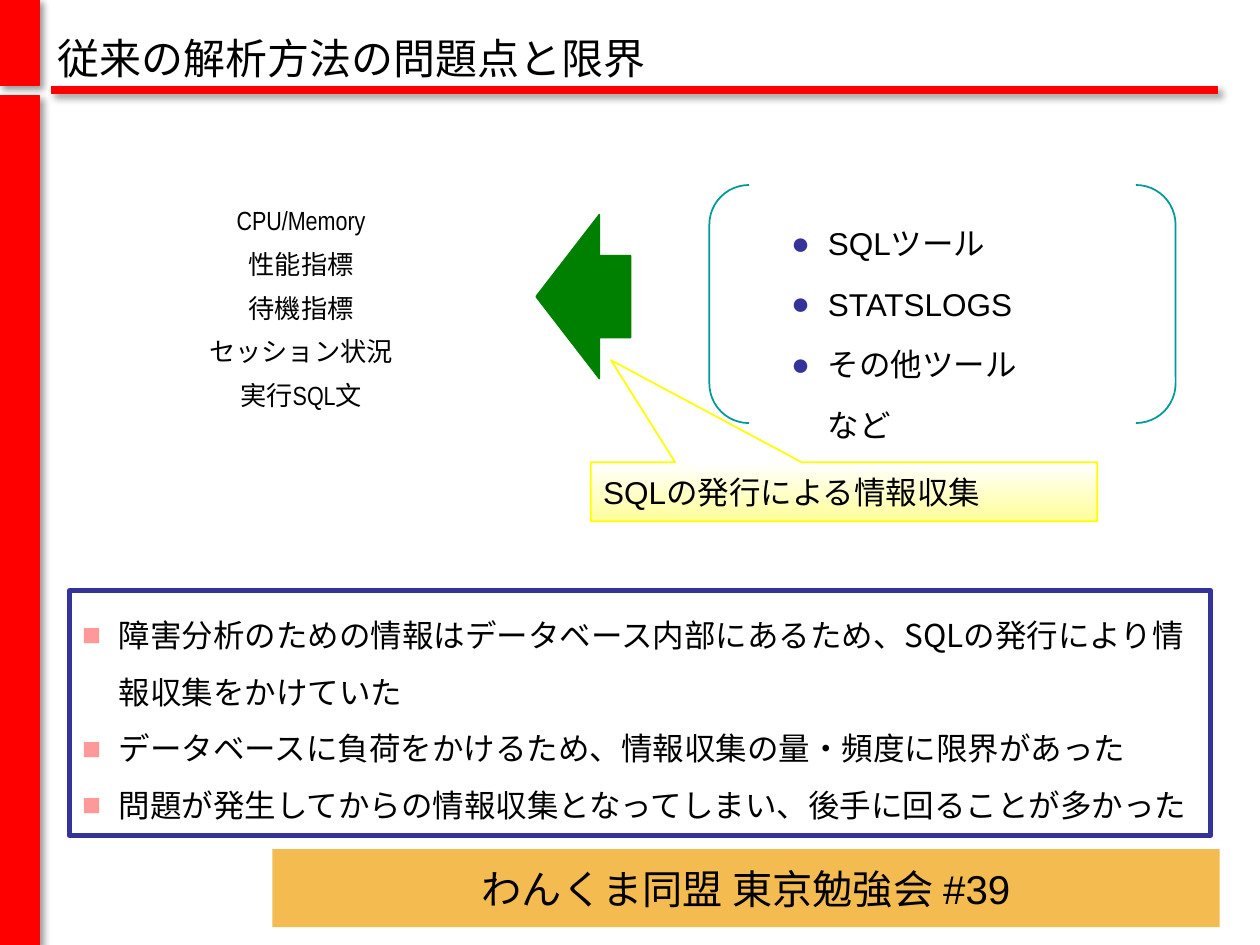
from lxml import etree
from pptx import Presentation
from pptx.dml.color import RGBColor
from pptx.enum.shapes import MSO_SHAPE as Shape
from pptx.enum.text import MSO_ANCHOR as Anchor, MSO_AUTO_SIZE as AutoSize, PP_ALIGN as Align
from pptx.oxml import parse_xml
from pptx.oxml.ns import nsdecls, qn
from pptx.util import Cm, Pt

ARIAL, NARROW, CJK = "Arial", "Arial Narrow", "Noto Sans CJK JP"
RED, GREEN, TEAL, NAVY, YELLOW = "FF0000", "008000", "009999", "333399", "FFFF00"


def color(hex_code):
    return RGBColor.from_string(hex_code)


def place(sp, x, y, w, h):
    sp.left, sp.top, sp.width, sp.height = Cm(x), Cm(y), Cm(w), Cm(h)


def add_box(s, kind, box, fill=None, line=None, width=1.0):
    sp = s.shapes.add_shape(kind, *map(Cm, box))
    sp.shadow.inherit = False
    if fill:
        sp.fill.solid()
        sp.fill.fore_color.rgb = color(fill)
    else:
        sp.fill.background()
    set_line(sp, line, width)
    return sp


def set_line(sp, line, width):
    if line:
        sp.line.color.rgb = color(line)
        sp.line.width = Pt(width)
    else:
        sp.line.fill.background()


def cast_shadow(sp):
    effects = sp._element.spPr.find(qn("a:effectLst"))
    effects.append(parse_xml(
        f'<a:outerShdw {nsdecls("a")} blurRad="50800" dist="38100" dir="2700000">'
        '<a:srgbClr val="000000"><a:alpha val="40000"/></a:srgbClr></a:outerShdw>'))


def add_bullet(p, char, hex_code):
    pPr = p._p.get_or_add_pPr()
    pPr.set("marL", str(Cm(0.74)))
    pPr.set("indent", str(-Cm(0.74)))
    bu_color = etree.SubElement(pPr, qn("a:buClr"))
    etree.SubElement(bu_color, qn("a:srgbClr"), val=hex_code)
    etree.SubElement(pPr, qn("a:buFont"), typeface=ARIAL)
    etree.SubElement(pPr, qn("a:buChar"), char=char)


def add_run(p, text, size, font):
    r = p.add_run()
    r.text = text
    r.font.size = Pt(size)
    r.font.name = font
    r.font.color.rgb = color("000000")
    latin = r._r.rPr.find(qn("a:latin"))
    latin.addnext(latin.makeelement(qn("a:ea"), {"typeface": CJK}))


def write(sp, lines, size, font, anchor=Anchor.MIDDLE, align=Align.LEFT,
          spacing=None, bullet=None, wrap=True):
    tf = sp.text_frame
    tf.word_wrap = wrap
    tf.auto_size = AutoSize.NONE
    tf.vertical_anchor = anchor
    for i, line in enumerate(lines):
        p = tf.add_paragraph() if i else tf.paragraphs[0]
        if bullet:
            add_bullet(p, *bullet)
        p.alignment = align
        p.space_before = Pt(0)
        if spacing:
            p.line_spacing = spacing
        for j, part in enumerate(line.split("\n")):
            if j:
                p.add_line_break()
            add_run(p, part, size, font)


def draw_frame(s, x, y, w, h):
    bars = [(x, y, 0.79, 1.73), (x, y + 1.93, 0.79, h - 1.93), (x + 1.04, y + 1.75, w - 1.9, 0.13)]
    for bar in bars:
        cast_shadow(add_box(s, Shape.RECTANGLE, bar, RED, RED, 0.75))
    footer = add_box(s, Shape.RECTANGLE, (x + 5.49, y + h - 1.93, 19.1, 1.57), "F3BB50")
    write(footer, ["わんくま同盟 東京勉強会 #39"], 23, ARIAL, align=Align.CENTER)


def draw_title(s, x, y, w, h):
    title = s.shapes.title
    place(title, x, y, w, h)
    write(title, ["従来の解析方法の問題点と限界"], 24, CJK, wrap=False)


def draw_metrics(s, x, y, w, h):
    sp = add_box(s, Shape.RECTANGLE, (x, y, w, h), line="FFFFFF")
    lines = ["CPU/Memory", "性能指標", "待機指標", "セッション状況", "実行SQL文"]
    write(sp, lines, 15, NARROW, align=Align.CENTER, spacing=Pt(25))


def draw_arrow(s, x, y, w, h):
    arrow = add_box(s, Shape.LEFT_ARROW, (x, y, w, h), GREEN, GREEN)
    arrow.adjustments[0], arrow.adjustments[1] = 0.5, 0.67


def draw_tools(s, x, y, w, h):
    add_box(s, Shape.DOUBLE_BRACKET, (x, y, w, h), line=TEAL)
    tools = s.shapes.add_textbox(Cm(x + 1.4), Cm(y + 0.21), Cm(w - 2.08), Cm(h - 0.89))
    write(tools, ["SQLツール", "STATSLOGS", "その他ツール\nなど"], 18, ARIAL,
          Anchor.TOP, spacing=1.6, bullet=("●", NAVY), wrap=False)


def draw_callout(s, x, y, w, h):
    sp = add_box(s, Shape.RECTANGULAR_CALLOUT, (x, y, w, h), line=YELLOW)
    sp.adjustments[0], sp.adjustments[1] = -0.46, -2.23
    sp.fill.gradient()
    sp.fill.gradient_angle = 270
    for stop, hex_code, position in zip(sp.fill.gradient_stops, ("FFFFFF", "FFFF99"), (0, 1)):
        stop.color.rgb = color(hex_code)
        stop.position = position
    write(sp, ["SQLの発行による情報収集"], 18, ARIAL)


def draw_problems(s, x, y, w, h):
    body = s.placeholders[1]
    place(body, x, y, w, h)
    set_line(body, NAVY, 3)
    lines = [
        "障害分析のための情報はデータベース内部にあるため、SQLの発行により情報収集をかけていた",
        "データベースに負荷をかけるため、情報収集の量・頻度に限界があった",
        "問題が発生してからの情報収集となってしまい、後手に回ることが多かった",
    ]
    write(body, lines, 18, CJK, Anchor.TOP, spacing=1.5, bullet=("■", "FF9999"))


def main():
    prs = Presentation()
    prs.slide_width, prs.slide_height = Cm(25.4), Cm(19.05)
    s = prs.slides.add_slide(prs.slide_layouts[1])
    draw_frame(s, 0, 0, 25.4, 19.05)
    draw_title(s, 0.91, 0.56, 20.6, 1.22)
    draw_metrics(s, 2.77, 3.58, 6.6, 5)
    draw_arrow(s, 10.81, 4.33, 1.9, 3.3)
    draw_tools(s, 14.3, 3.73, 9.4, 4.8)
    draw_callout(s, 11.91, 9.32, 10.21, 1.19)
    draw_problems(s, 1.4, 11.91, 23.01, 4.93)
    prs.save("out.pptx")


if __name__ == "__main__":
    main()
